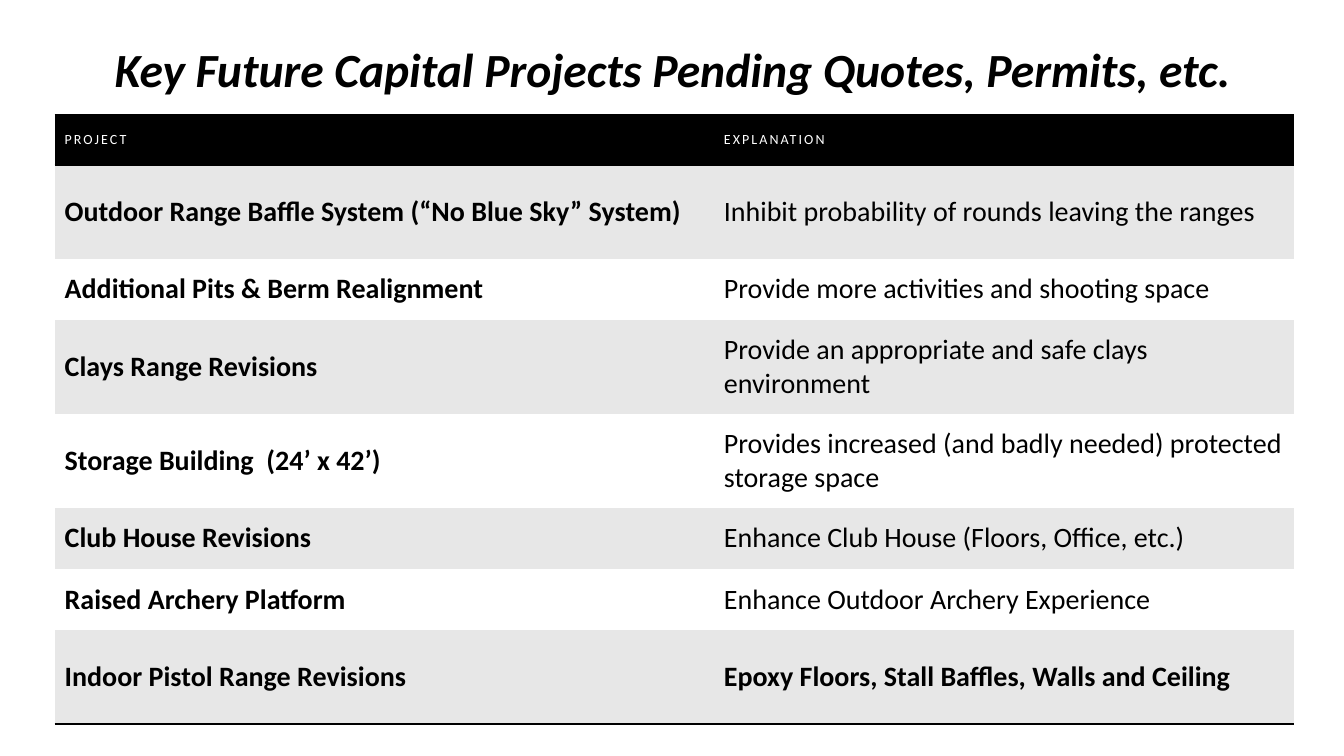
import pptx
import pptx.util
import pptx.dml.color
import pptx.enum.text
import lxml.etree
from dataclasses import dataclass

Pt = pptx.util.Pt
Align = pptx.enum.text.PP_ALIGN
Anchor = pptx.enum.text.MSO_ANCHOR
Fit = pptx.enum.text.MSO_AUTO_SIZE


@dataclass(frozen=True)
class Theme:
    face: str = "Calibri"
    ink: str = "000000"
    paper: str = "FFFFFF"
    band: str = "E7E7E7"
    title: int = 34
    head: int = 10
    body: int = 20
    rule: int = 2
    inset: float = 7.2
    track: float = 1.5


@dataclass(frozen=True)
class Box:
    left: float
    top: float
    width: float
    height: float


THEME = Theme()
PLAIN = "{2D5ABB26-0587-4C30-8999-92F81FD0307C}"
HEAD, LOW, TALL = 35.28, 43.92, 66.96
SPLIT = 470.88
TITLE = "Key Future Capital Projects Pending Quotes, Permits, etc. "
LABELS = ("PROJECT", "EXPLANATION")
PROJECTS = [
    ("Outdoor Range Baffle System (“No Blue Sky” System)",
     "Inhibit probability of rounds leaving the ranges", TALL),
    ("Additional Pits & Berm Realignment",
     "Provide more activities and shooting space", LOW),
    ("Clays Range Revisions",
     "Provide an appropriate and safe clays environment", TALL),
    ("Storage Building  (24’ x 42’)",
     "Provides increased (and badly needed) protected storage space", TALL),
    ("Club House Revisions",
     "Enhance Club House (Floors, Office, etc.)", LOW),
    ("Raised Archery Platform",
     "Enhance Outdoor Archery Experience", LOW),
    ("Indoor Pistol Range Revisions",
     "Epoxy Floors, Stall Baffles, Walls and Ceiling", TALL),
]


def paint(code):
    return pptx.dml.color.RGBColor.from_string(code)


def style(para, size, color, bold=False, slant=False):
    font = para.font
    font.name = THEME.face
    font.size = Pt(size)
    font.bold = bold
    font.italic = slant
    font.color.rgb = paint(color)


def edge(cell, side):
    name = pptx.oxml.ns.qn
    line = lxml.etree.Element(name("a:ln" + side), w=str(Pt(THEME.rule)))
    fill = lxml.etree.SubElement(line, name("a:solidFill"))
    lxml.etree.SubElement(fill, name("a:srgbClr"), val=THEME.ink)
    cell._tc.get_or_add_tcPr().insert(0, line)


def write(cell, text, size, color, back, bold):
    cell.text = text
    cell.vertical_anchor = Anchor.MIDDLE
    cell.margin_left = cell.margin_right = Pt(THEME.inset)
    cell.margin_top = cell.margin_bottom = Pt(THEME.inset)
    cell.fill.solid()
    cell.fill.fore_color.rgb = paint(back)
    para = cell.text_frame.paragraphs[0]
    style(para, size, color, bold)
    return para


def add_title(slide, box):
    shape = slide.shapes.title
    shape.left, shape.top = Pt(box.left), Pt(box.top)
    shape.width, shape.height = Pt(box.width), Pt(box.height)
    frame = shape.text_frame
    frame.text = TITLE
    frame.word_wrap = True
    frame.auto_size = Fit.NONE
    frame.vertical_anchor = Anchor.BOTTOM
    para = frame.paragraphs[0]
    para.alignment = Align.RIGHT
    para.line_spacing = 0.9
    para.space_after = Pt(6)
    style(para, THEME.title, THEME.ink, True, True)


def add_grid(slide, box):
    frame = slide.shapes.add_table(
        len(PROJECTS) + 1, len(LABELS),
        Pt(box.left), Pt(box.top), Pt(box.width), Pt(box.height))
    grid = frame.table
    grid._tbl.tblPr.find(pptx.oxml.ns.qn("a:tableStyleId")).text = PLAIN
    grid.horz_banding = False
    grid.columns[0].width = Pt(SPLIT)
    grid.columns[1].width = Pt(box.width - SPLIT)

    grid.rows[0].height = Pt(HEAD)
    for col, label in enumerate(LABELS):
        cell = grid.cell(0, col)
        para = write(cell, label, THEME.head, THEME.paper, THEME.ink, False)
        para.runs[0].font._element.set("spc", str(int(THEME.track * 100)))
        edge(cell, "B")
        edge(cell, "T")

    last = len(PROJECTS)
    for row, (name, note, tall) in enumerate(PROJECTS, 1):
        grid.rows[row].height = Pt(tall)
        back = THEME.band if row % 2 else THEME.paper
        for col, text in enumerate((name, note)):
            cell = grid.cell(row, col)
            bold = col == 0 or row == last
            write(cell, text, THEME.body, THEME.ink, back, bold)
            if row == last:
                edge(cell, "B")


def main():
    deck = pptx.Presentation()
    deck.slide_width, deck.slide_height = Pt(960), Pt(540)
    slide = deck.slides.add_slide(deck.slide_layouts[5])
    add_title(slide, Box(66, 0, 828, 73.5))
    add_grid(slide, Box(39, 82.5, 885, HEAD + sum(p[2] for p in PROJECTS)))
    deck.save("out.pptx")


if __name__ == "__main__":
    main()
